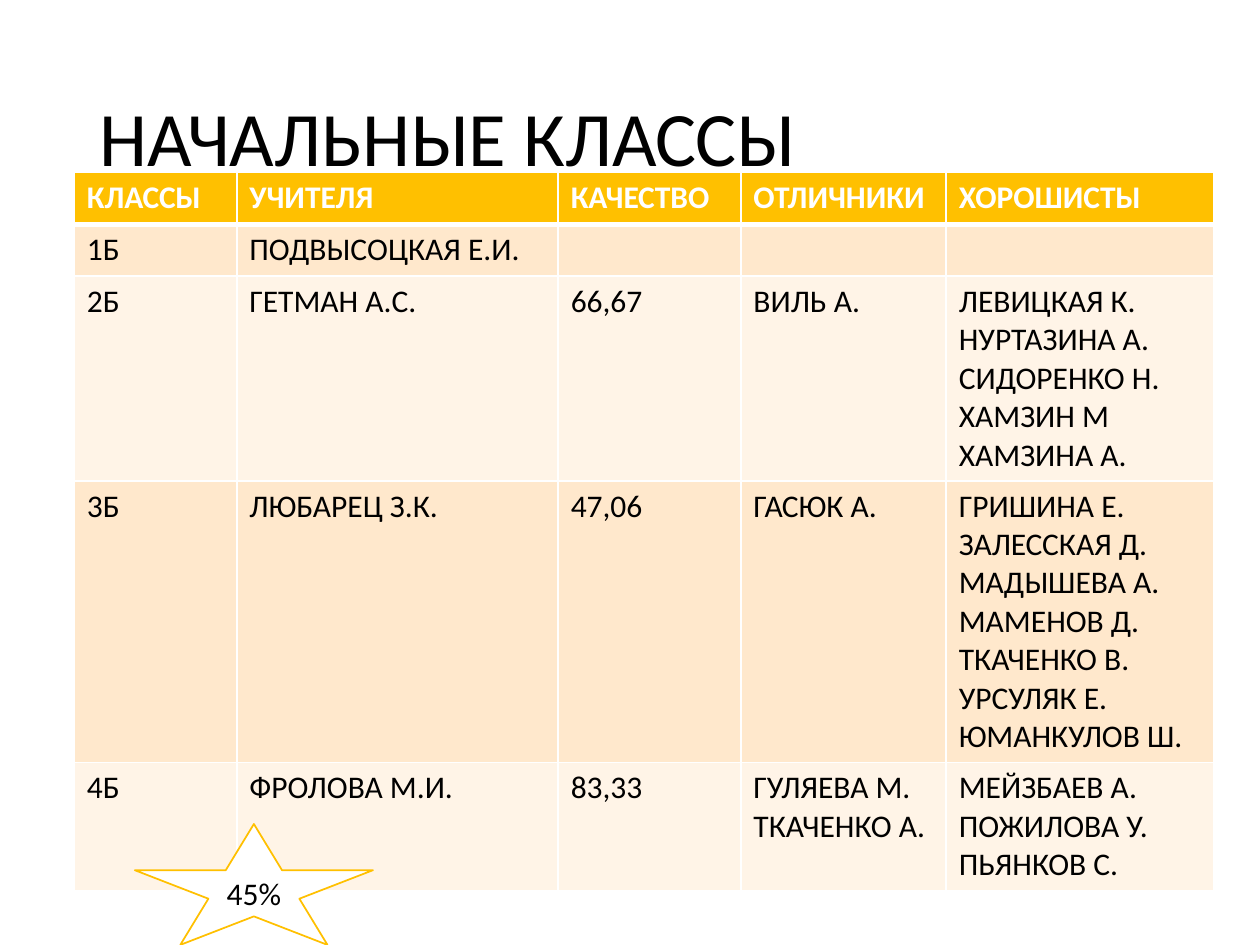
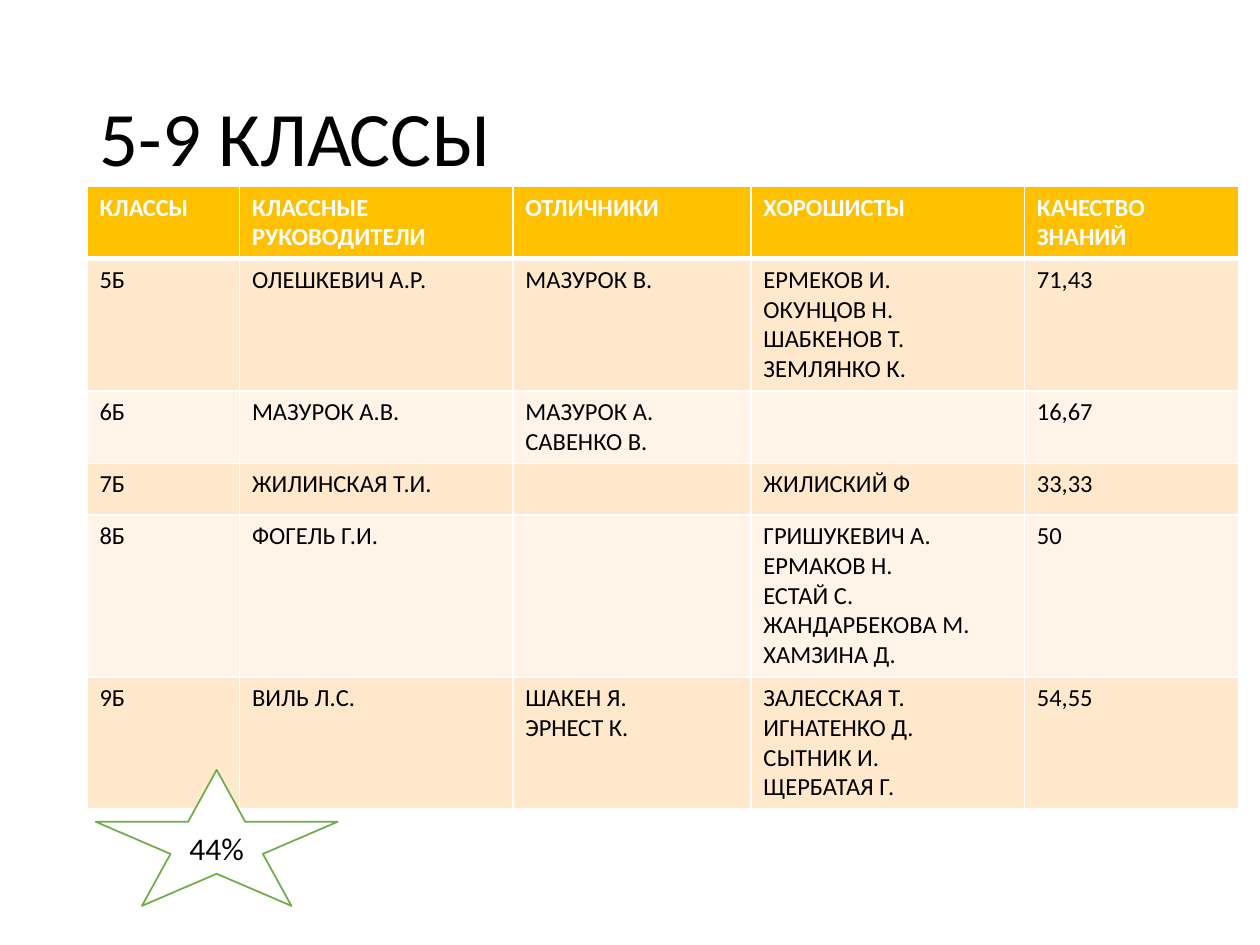
from lxml import etree
from pptx import Presentation
from pptx.dml.color import RGBColor as RGB
from pptx.enum.shapes import MSO_SHAPE as Shape
from pptx.enum.text import MSO_ANCHOR as Anchor, MSO_AUTO_SIZE as Auto, PP_ALIGN as Align
from pptx.oxml.ns import qn
from pptx.util import Inches, Pt

FONT = "Calibri"
BLACK = RGB(0x00, 0x00, 0x00)
WHITE = RGB(0xFF, 0xFF, 0xFF)
GOLD = RGB(0xFF, 0xC0, 0x00)
GREEN = RGB(0x70, 0xAD, 0x47)
BANDS = [RGB(0xFF, 0xE8, 0xCC), RGB(0xFF, 0xF4, 0xE7)]
MIN_ROW = 0.41

# A cell with several names is a list, one name to a paragraph.
SLIDES = [
    {
        "title": "НАЧАЛЬНЫЕ КЛАССЫ",
        "at": (0.59, 1.37),
        "cols": [1.29, 2.55, 1.45, 1.63, 2.12],
        "size": 18,
        "rows": [
            ["КЛАССЫ", "УЧИТЕЛЯ", "КАЧЕСТВО", "ОТЛИЧНИКИ", "ХОРОШИСТЫ"],
            ["1Б", "ПОДВЫСОЦКАЯ Е.И.", "", "", ""],
            ["2Б", "ГЕТМАН А.С.", "66,67", "ВИЛЬ А.",
             ["ЛЕВИЦКАЯ К.", "НУРТАЗИНА А.", "СИДОРЕНКО Н.", "ХАМЗИН М", "ХАМЗИНА А."]],
            ["3Б", "ЛЮБАРЕЦ З.К.", "47,06", "ГАСЮК А.",
             ["ГРИШИНА Е.", "ЗАЛЕССКАЯ Д.", "МАДЫШЕВА А.", "МАМЕНОВ Д.",
              "ТКАЧЕНКО В.", "УРСУЛЯК Е.", "ЮМАНКУЛОВ Ш."]],
            ["4Б", "ФРОЛОВА М.И.", "83,33", ["ГУЛЯЕВА М.", "ТКАЧЕНКО А."],
             ["МЕЙЗБАЕВ А.", "ПОЖИЛОВА У.", "ПЬЯНКОВ С."]],
        ],
        "star": ("45%", (1.07, 6.54, 1.89, 0.96), GOLD),
    },
    {
        "title": "5-9 КЛАССЫ",
        "at": (0.69, 1.48),
        "cols": [1.21, 2.17, 1.89, 2.17, 1.7],
        "size": 14,
        "rows": [
            ["КЛАССЫ", "КЛАССНЫЕ РУКОВОДИТЕЛИ", "ОТЛИЧНИКИ", "ХОРОШИСТЫ",
             "КАЧЕСТВО ЗНАНИЙ"],
            ["5Б", "ОЛЕШКЕВИЧ А.Р.", "МАЗУРОК В.",
             ["ЕРМЕКОВ И.", "ОКУНЦОВ Н.", "ШАБКЕНОВ Т.", "ЗЕМЛЯНКО К."], "71,43"],
            ["6Б", "МАЗУРОК А.В.", ["МАЗУРОК А.", "САВЕНКО В."], "", "16,67"],
            ["7Б", "ЖИЛИНСКАЯ Т.И.", "", "ЖИЛИСКИЙ Ф", "33,33"],
            ["8Б", "ФОГЕЛЬ Г.И.", "",
             ["ГРИШУКЕВИЧ А.", "ЕРМАКОВ Н.", "ЕСТАЙ С.", "ЖАНДАРБЕКОВА М.",
              "ХАМЗИНА Д."], "50"],
            ["9Б", "ВИЛЬ Л.С.", ["ШАКЕН Я.", "ЭРНЕСТ К."],
             ["ЗАЛЕССКАЯ Т.", "ИГНАТЕНКО Д.", "СЫТНИК И.", "ЩЕРБАТАЯ Г."], "54,55"],
        ],
        "star": ("44%", (0.76, 6.11, 1.92, 1.08), GREEN),
    },
]


def place(shape, *box):
    shape.left, shape.top, shape.width, shape.height = map(Inches, box)


def write(para, text, size, color=BLACK, bold=False):
    run = para.add_run()
    run.text = text
    font = run.font
    font.name, font.size, font.bold = FONT, Pt(size), bold
    font.color.rgb = color


def add_title(slide, text):
    title = slide.shapes.title
    place(title, 0.69, 0.4, 8.62, 1.45)
    frame = title.text_frame
    frame.auto_size = Auto.NONE
    frame.word_wrap = True
    frame.vertical_anchor = Anchor.MIDDLE
    para = frame.paragraphs[0]
    para.alignment = Align.LEFT
    para.line_spacing = 0.9
    write(para, text, 44)


def set_borders(cell, widths):
    """Draw white borders; widths maps a side (L, R, T, B) to points."""
    props = cell._tc.get_or_add_tcPr()
    for side, width in widths.items():
        line = etree.SubElement(props, qn(f"a:ln{side}"), w=str(Pt(width)))
        fill = etree.SubElement(line, qn("a:solidFill"))
        etree.SubElement(fill, qn("a:srgbClr"), val=str(WHITE))


def names(value):
    return value if isinstance(value, list) else [value]


def fill_cell(cell, value, size, row):
    head = row == 0
    set_borders(cell, {"L": 1, "R": 1, "T": 3 if row == 1 else 1, "B": 3 if head else 1})
    cell.fill.solid()
    cell.fill.fore_color.rgb = GOLD if head else BANDS[(row - 1) % 2]
    frame = cell.text_frame
    for i, name in enumerate(names(value)):
        para = frame.add_paragraph() if i else frame.paragraphs[0]
        if name:
            write(para, name, size, WHITE if head else BLACK, head)
        else:
            para.font.size = Pt(size)


def row_height(row, size):
    """Height of the tallest cell: its lines plus the cell margins."""
    lines = max(len(names(value)) for value in row)
    return max(MIN_ROW, lines * size * 1.22 / 72 + 0.1)


def add_grid(slide, at, cols, rows, size):
    highs = [row_height(row, size) for row in rows]
    box = map(Inches, (*at, sum(cols), sum(highs)))
    table = slide.shapes.add_table(len(rows), len(cols), *box).table
    for col, width in zip(table.columns, cols):
        col.width = Inches(width)
    for r, row in enumerate(rows):
        table.rows[r].height = Inches(highs[r])
        for c, value in enumerate(row):
            fill_cell(table.cell(r, c), value, size, r)


def add_star(slide, text, box, color):
    star = slide.shapes.add_shape(Shape.STAR_5_POINT, *map(Inches, box))
    star.shadow.inherit = False
    star.fill.solid()
    star.fill.fore_color.rgb = WHITE
    star.line.color.rgb = color
    star.line.width = Pt(1)
    frame = star.text_frame
    frame.vertical_anchor = Anchor.MIDDLE
    para = frame.paragraphs[0]
    para.alignment = Align.CENTER
    write(para, text, 18)


def main():
    deck = Presentation()
    deck.slide_width, deck.slide_height = Inches(10), Inches(7.5)
    for data in SLIDES:
        slide = deck.slides.add_slide(deck.slide_layouts[5])
        add_title(slide, data["title"])
        add_grid(slide, data["at"], data["cols"], data["rows"], data["size"])
        add_star(slide, *data["star"])
    deck.save("out.pptx")


if __name__ == "__main__":
    main()
